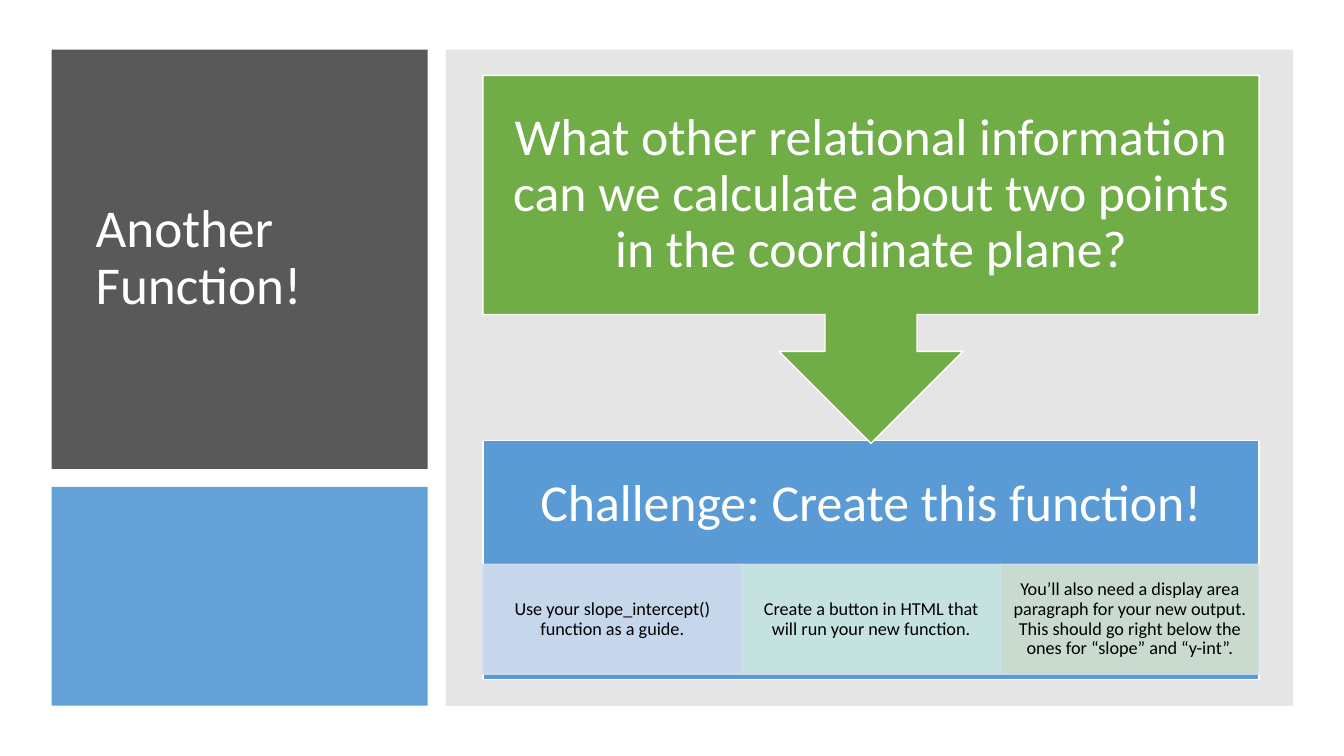
from lxml.etree import SubElement
from pptx import Presentation
from pptx.dml.color import RGBColor
from pptx.enum.shapes import MSO_SHAPE
from pptx.enum.text import MSO_ANCHOR, MSO_AUTO_SIZE, PP_ALIGN
from pptx.oxml.ns import qn
from pptx.util import Cm, Pt

WHITE, BLACK = "FFFFFF", "000000"
BLUE, GREEN, PALE = "5B9BD5", "70AD47", "D2DEEF"


def paint(fill, color, opacity=100):
    fill.solid()
    fill.fore_color.rgb = RGBColor.from_string(color)
    if opacity < 100:
        tint = fill._xPr.find(qn("a:solidFill"))[0]
        SubElement(tint, qn("a:alpha"), val=str(opacity * 1000))


class SlideBuilder:
    font = "Calibri"

    def __init__(self, page):
        self.page = page

    def place(self, item, left, top, width, height):
        item.left, item.top = Cm(left), Cm(top)
        item.width, item.height = Cm(width), Cm(height)

    def add_text(self, item, text, size, color, align, inset):
        frame = item.text_frame
        frame.word_wrap = True
        frame.auto_size = MSO_AUTO_SIZE.NONE
        frame.vertical_anchor = MSO_ANCHOR.MIDDLE
        frame.margin_left = frame.margin_right = Cm(inset[0])
        frame.margin_top = frame.margin_bottom = Cm(inset[1])
        para = frame.paragraphs[0]
        para.alignment = align
        para.line_spacing = 0.9
        span = para.add_run()
        span.text = text
        span.font.name = self.font
        span.font.size = Pt(size)
        span.font.color.rgb = RGBColor.from_string(color)

    def panel(self, bounds, color, opacity=100, line=None, kind=MSO_SHAPE.RECTANGLE):
        box = self.page.shapes.add_shape(kind, *map(Cm, bounds))
        box.shadow.inherit = False
        paint(box.fill, color, opacity)
        if line:
            paint(box.line.fill, line, opacity)
            box.line.width = Pt(1)
        else:
            box.line.fill.background()
        return box

    def title(self, bounds, text):
        heading = self.page.shapes.title
        self.page.shapes._spTree.append(heading._element)
        self.place(heading, *bounds)
        self.add_text(heading, text, 38, WHITE, PP_ALIGN.LEFT, (0.25, 0.13))

    def label(self, bounds, text):
        box = self.page.shapes.add_textbox(*map(Cm, bounds))
        self.add_text(box, text, 37, WHITE, PP_ALIGN.CENTER, (0.74, 0.74))

    def tile(self, bounds, text, color):
        box = self.panel(bounds, color, 90, PALE)
        self.add_text(box, text, 13, BLACK, PP_ALIGN.CENTER, (0.25, 0.05))


def main():
    deck = Presentation()
    deck.slide_width, deck.slide_height = Cm(33.87), Cm(19.05)
    slide = SlideBuilder(deck.slides.add_slide(deck.slide_layouts[5]))

    slide.panel((1.3, 1.25, 9.48, 10.57), "595959")
    slide.title((2.16, 2.03, 7.9, 8.99), "Another Function!")
    slide.panel((1.3, 12.27, 9.48, 5.51), BLUE, 95)
    slide.panel((11.23, 1.25, 21.36, 16.54), "808080", 20)

    left, width = 12.17, 19.56
    slide.panel((left, 11.1, width, 6.02), BLUE, line=WHITE)
    slide.label((left, 11.1, width, 3.25), "Challenge: Create this function!")

    steps = [
        ("Use your slope_intercept() function as a guide.", PALE),
        ("Create a button in HTML that will run your new function.", "D0EAE1"),
        ("You’ll also need a display area paragraph for your new output. "
         "This should go right below the ones for “slope” and “y-int”.", "D5E3CF"),
    ]
    step_width = width / len(steps)
    for index, (text, color) in enumerate(steps):
        slide.tile((left + index * step_width, 14.22, step_width, 2.77), text, color)

    callout = slide.panel((left, 1.9, width, 9.27), GREEN, line=WHITE,
                          kind=MSO_SHAPE.UP_ARROW_CALLOUT)
    callout.rotation = 180
    slide.label((left, 1.9, width, 6.02),
                "What other relational information can we calculate "
                "about two points in the coordinate plane?")

    deck.save("out.pptx")


if __name__ == "__main__":
    main()
